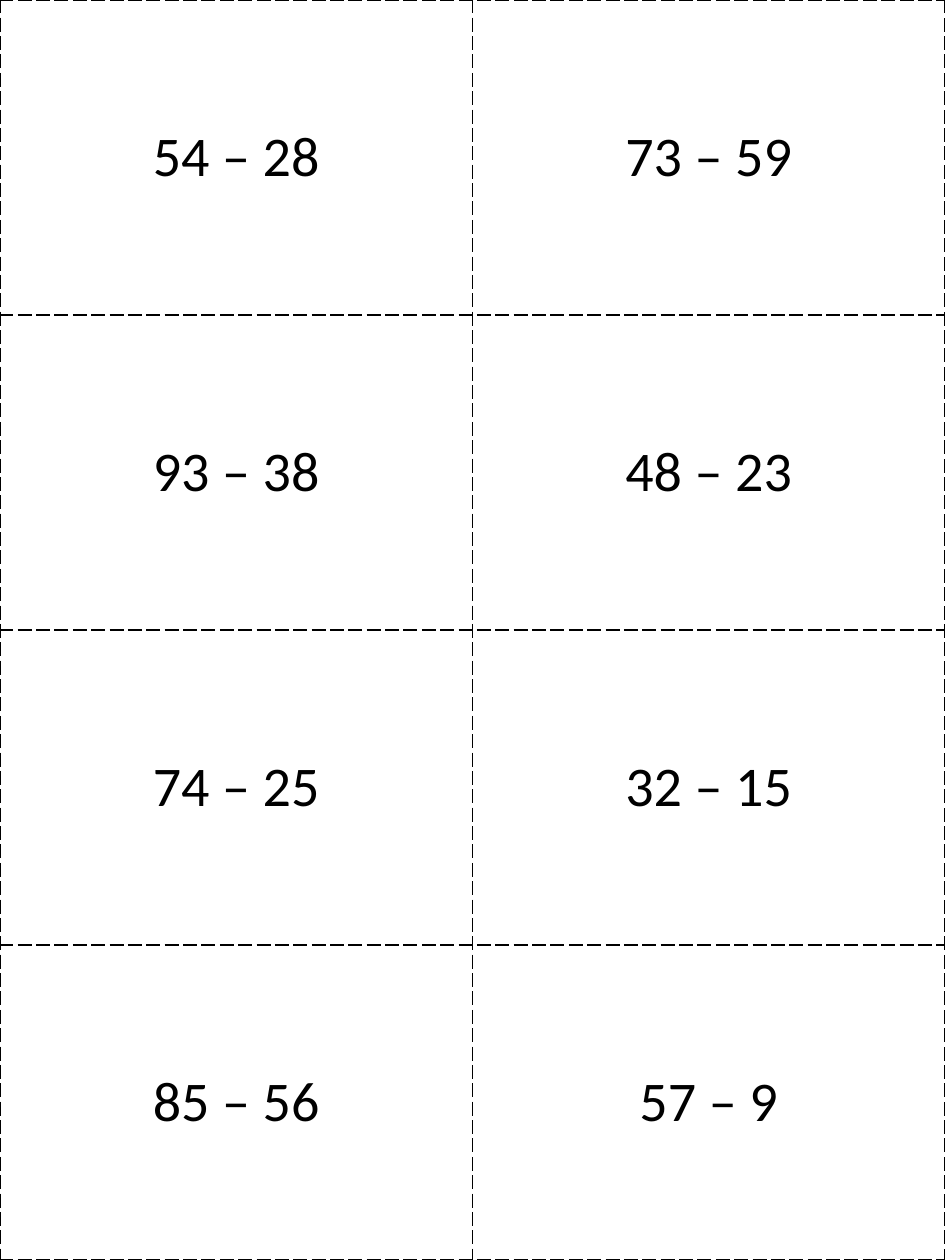
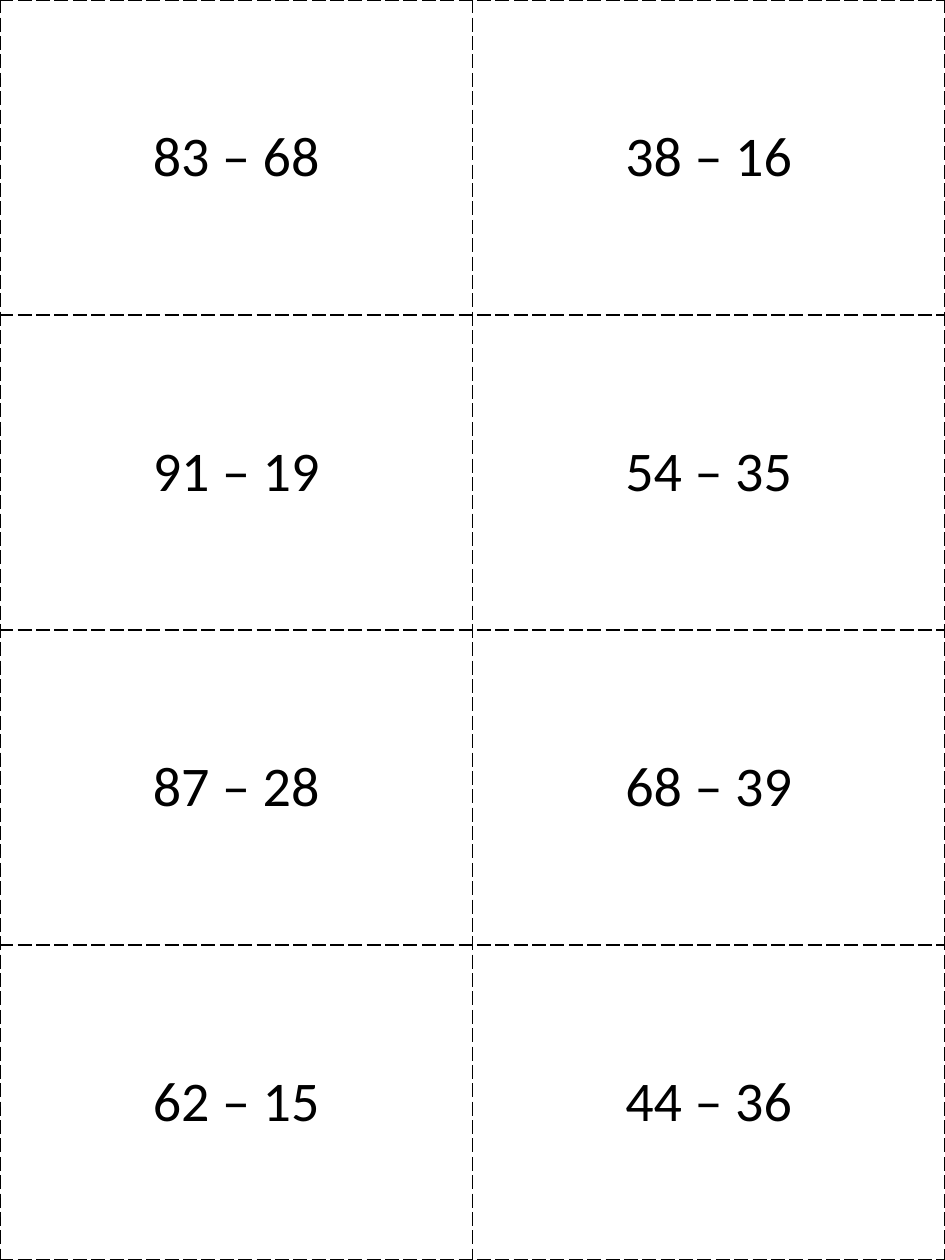
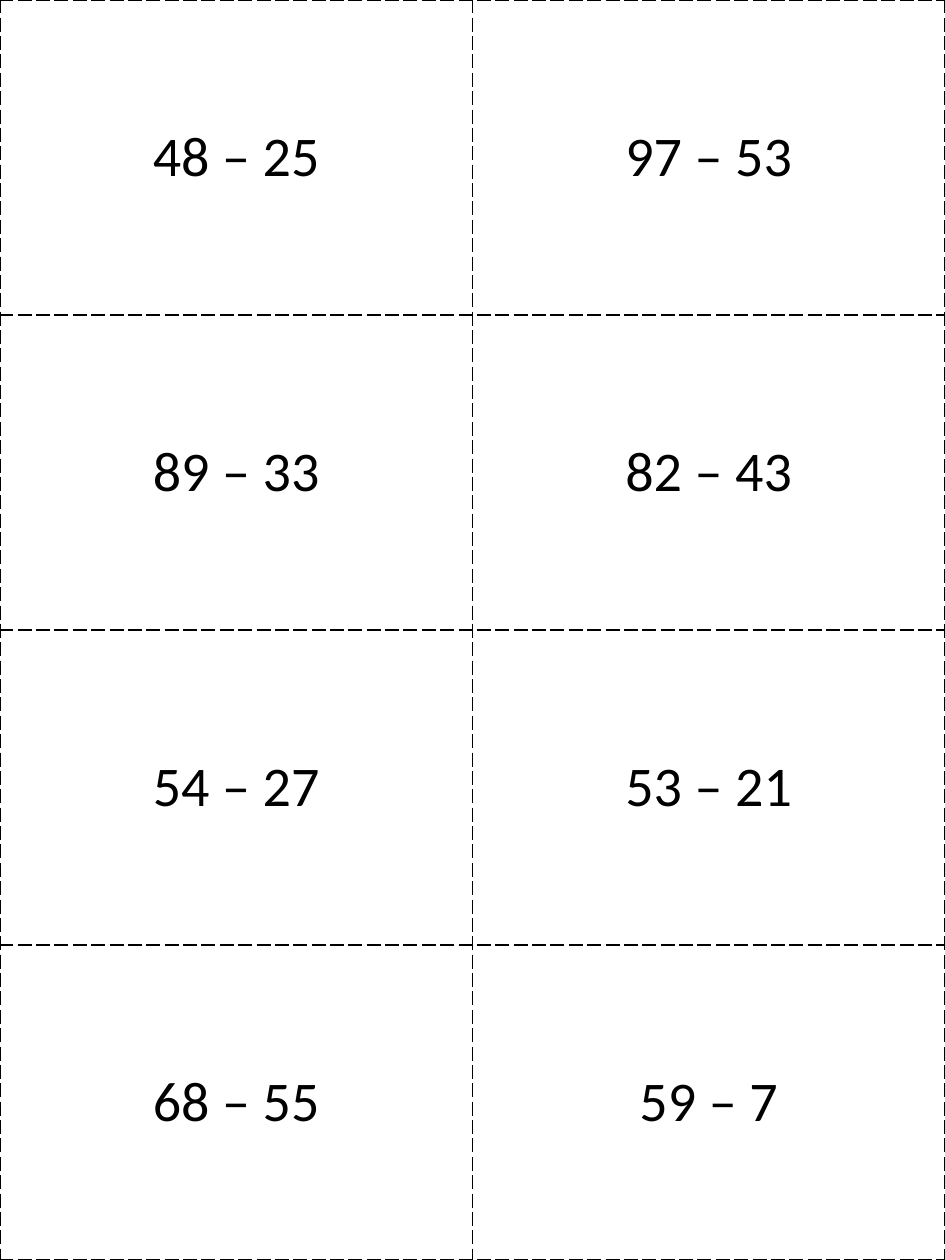
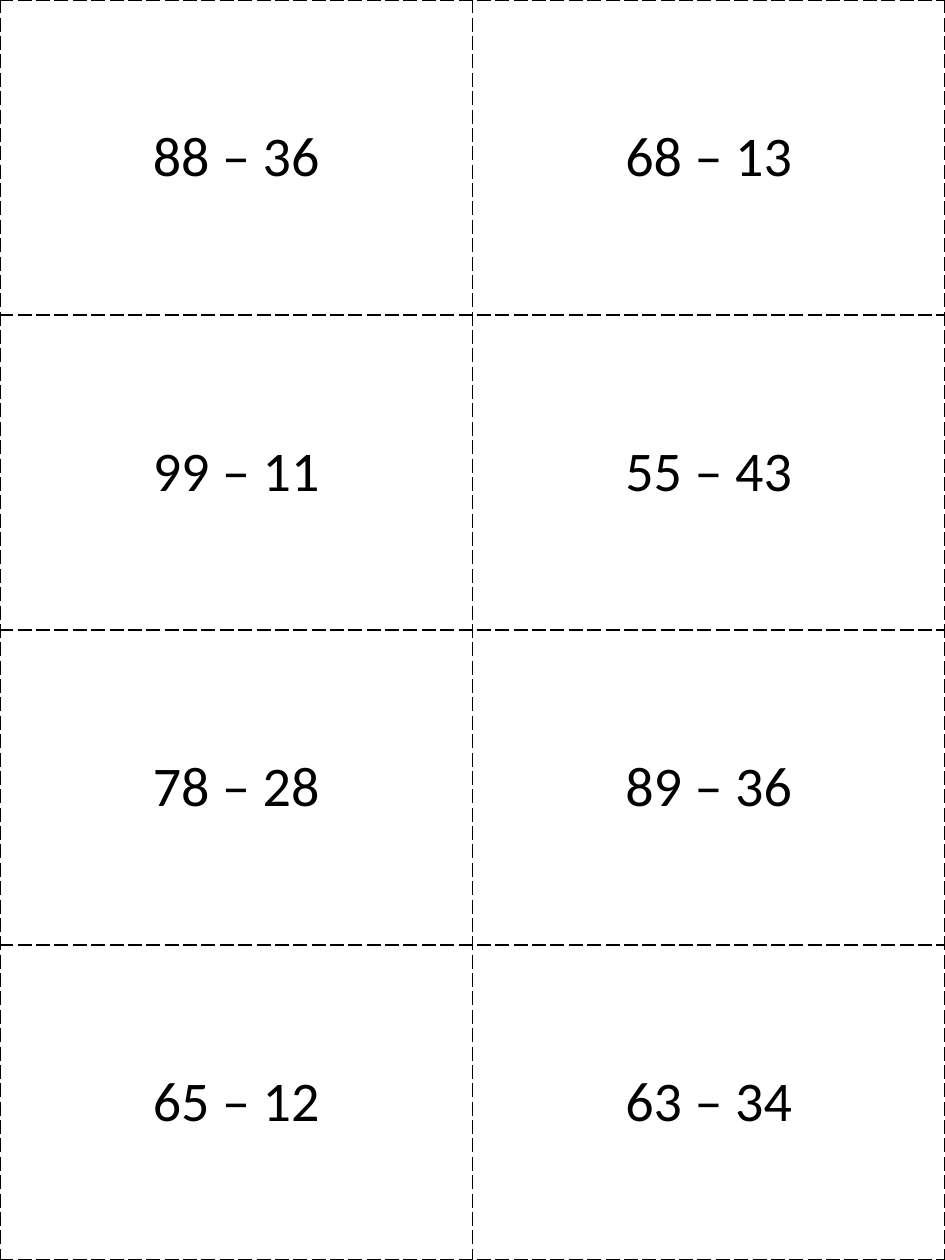
from lxml.etree import SubElement
from pptx import Presentation
from pptx.dml.color import RGBColor
from pptx.enum.text import MSO_ANCHOR, PP_ALIGN
from pptx.oxml.ns import qn
from pptx.util import Inches, Pt

BLACK = RGBColor(0x00, 0x00, 0x00)
WHITE = RGBColor(0xFF, 0xFF, 0xFF)
FONT = "Calibri"
PAGE_WIDTH, PAGE_HEIGHT = Inches(7.5), Inches(10)
COLUMNS = 2

PROBLEM_PAGES = [
    ["54 – 28", "73 – 59", "93 – 38", "48 – 23", "74 – 25", "32 – 15", "85 – 56", "57 – 9"],
    ["83 – 68", "38 – 16", "91 – 19", "54 – 35", "87 – 28", "68 – 39", "62 – 15", "44 – 36"],
    ["48 – 25", "97 – 53", "89 – 33", "82 – 43", "54 – 27", "53 – 21", "68 – 55", "59 – 7"],
    ["88 – 36", "68 – 13", "99 – 11", "55 – 43", "78 – 28", "89 – 36", "65 – 12", "63 – 34"],
]


def add_cut_lines(cell):
    """Put a dashed border on all four sides; call before filling the cell."""
    properties = cell._tc.get_or_add_tcPr()
    for side in ("lnL", "lnR", "lnT", "lnB"):
        line = SubElement(properties, qn(f"a:{side}"), w=str(Pt(1)))
        fill = SubElement(line, qn("a:solidFill"))
        SubElement(fill, qn("a:srgbClr"), val=str(BLACK))
        SubElement(line, qn("a:prstDash"), val="lgDash")


deck = Presentation()
deck.slide_width, deck.slide_height = PAGE_WIDTH, PAGE_HEIGHT
blank_layout = deck.slide_layouts[6]

for problems in PROBLEM_PAGES:
    page = deck.slides.add_slide(blank_layout)
    rows = len(problems) // COLUMNS
    cards = page.shapes.add_table(rows, COLUMNS, 0, 0, PAGE_WIDTH, PAGE_HEIGHT).table
    cards.first_row = False
    cards.horz_banding = False

    for cell, problem in zip(cards.iter_cells(), problems):
        add_cut_lines(cell)
        cell.fill.solid()
        cell.fill.fore_color.rgb = WHITE
        cell.vertical_anchor = MSO_ANCHOR.MIDDLE
        cell.text = problem
        para = cell.text_frame.paragraphs[0]
        para.alignment = PP_ALIGN.CENTER
        para.font.name = FONT
        para.font.size = Pt(32)
        para.font.color.rgb = BLACK

deck.save("out.pptx")
